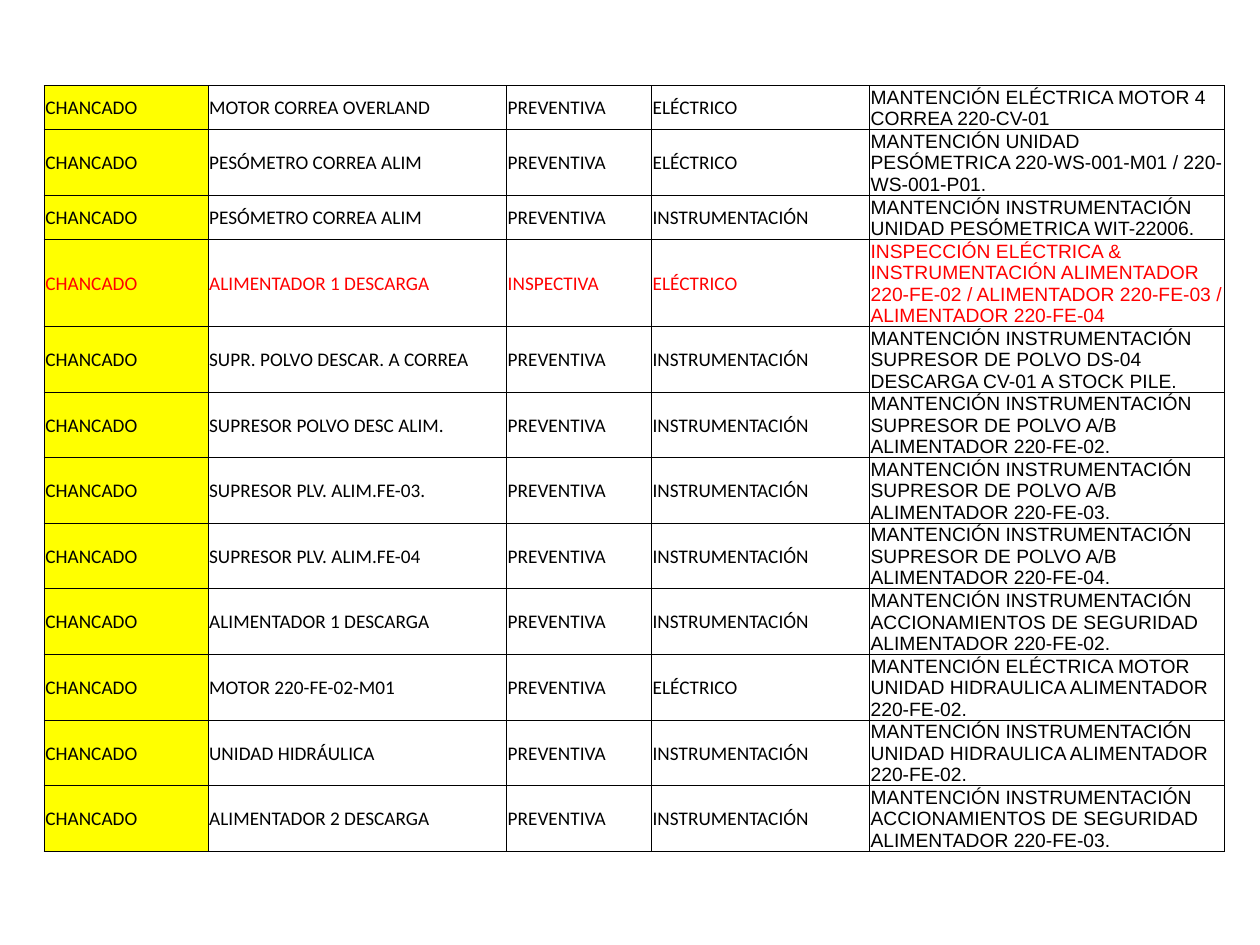
from dataclasses import dataclass

from lxml.etree import SubElement
from pptx import Presentation
from pptx.dml.color import RGBColor as RGB
from pptx.enum.text import MSO_ANCHOR as Anchor
from pptx.oxml.ns import qn
from pptx.util import Pt


@dataclass(frozen=True)
class Theme:
    ink: str = "000000"
    alert: str = "FF0000"
    area_fill: str = "FFFF00"
    label_font: str = "Calibri"
    detail_font: str = "Arial"
    size: float = 11
    border: float = 0.5
    inset: float = 0.72


class SlideBuilder:
    def __init__(self, prs, theme):
        self.theme = theme
        self.s = prs.slides.add_slide(prs.slide_layouts[6])

    def table(self, left, top, height, widths, heights, rows):
        frame = self.s.shapes.add_table(
            len(rows), len(widths), Pt(left), Pt(top), Pt(sum(widths)), Pt(height)
        )
        table = frame.table
        for flag in ("first_row", "horz_banding"):
            setattr(table, flag, False)
        for column, width in zip(table.columns, widths):
            column.width = Pt(width)
        for row, row_height in zip(table.rows, heights):
            row.height = Pt(row_height)
        frame.height = Pt(height)
        for r, values in enumerate(rows):
            color = self.theme.alert if "INSPECTIVA" in values else self.theme.ink
            for c, text in enumerate(values):
                self.cell(
                    table.cell(r, c), text, color,
                    font=self.theme.detail_font if c == len(widths) - 1 else self.theme.label_font,
                    fill=self.theme.area_fill if c == 0 else None,
                )

    def cell(self, cell, text, color, font, fill):
        inset = Pt(self.theme.inset)
        layout = {
            "margin_left": inset, "margin_right": inset, "margin_top": inset,
            "margin_bottom": 0, "vertical_anchor": Anchor.MIDDLE,
        }
        for name, value in layout.items():
            setattr(cell, name, value)
        run = cell.text_frame.paragraphs[0].add_run()
        run.text = text
        for name, value in {"name": font, "size": Pt(self.theme.size)}.items():
            setattr(run.font, name, value)
        run.font.color.rgb = RGB.from_string(color)
        self.borders(cell)
        if fill:
            cell.fill.solid()
            cell.fill.fore_color.rgb = RGB.from_string(fill)
        else:
            cell.fill.background()

    def borders(self, cell):
        props = cell._tc.get_or_add_tcPr()
        for side in ("lnL", "lnR", "lnT", "lnB"):
            line = SubElement(props, qn(f"a:{side}"), w=str(Pt(self.theme.border)))
            solid = SubElement(line, qn("a:solidFill"))
            SubElement(solid, qn("a:srgbClr"), val=self.theme.ink)


AREA = "CHANCADO"
PREV = "PREVENTIVA"
ELEC = "ELÉCTRICO"
INST = "INSTRUMENTACIÓN"

TASKS = [
    ("MOTOR CORREA OVERLAND", PREV, ELEC,
     "MANTENCIÓN ELÉCTRICA MOTOR 4 CORREA 220-CV-01"),
    ("PESÓMETRO CORREA ALIM", PREV, ELEC,
     "MANTENCIÓN UNIDAD PESÓMETRICA 220-WS-001-M01 / 220-WS-001-P01."),
    ("PESÓMETRO CORREA ALIM", PREV, INST,
     "MANTENCIÓN INSTRUMENTACIÓN UNIDAD PESÓMETRICA WIT-22006."),
    ("ALIMENTADOR 1 DESCARGA", "INSPECTIVA", ELEC,
     "INSPECCIÓN ELÉCTRICA & INSTRUMENTACIÓN ALIMENTADOR 220-FE-02 / "
     "ALIMENTADOR 220-FE-03 / ALIMENTADOR 220-FE-04"),
    ("SUPR. POLVO DESCAR. A CORREA", PREV, INST,
     "MANTENCIÓN INSTRUMENTACIÓN SUPRESOR DE POLVO DS-04 DESCARGA CV-01 A STOCK PILE."),
    ("SUPRESOR POLVO DESC ALIM.", PREV, INST,
     "MANTENCIÓN INSTRUMENTACIÓN SUPRESOR DE POLVO A/B ALIMENTADOR 220-FE-02."),
    ("SUPRESOR PLV. ALIM.FE-03.", PREV, INST,
     "MANTENCIÓN INSTRUMENTACIÓN SUPRESOR DE POLVO A/B ALIMENTADOR 220-FE-03."),
    ("SUPRESOR PLV. ALIM.FE-04", PREV, INST,
     "MANTENCIÓN INSTRUMENTACIÓN SUPRESOR DE POLVO A/B ALIMENTADOR 220-FE-04."),
    ("ALIMENTADOR 1 DESCARGA", PREV, INST,
     "MANTENCIÓN INSTRUMENTACIÓN ACCIONAMIENTOS DE SEGURIDAD ALIMENTADOR 220-FE-02."),
    ("MOTOR 220-FE-02-M01", PREV, ELEC,
     "MANTENCIÓN ELÉCTRICA MOTOR UNIDAD HIDRAULICA ALIMENTADOR 220-FE-02."),
    ("UNIDAD HIDRÁULICA", PREV, INST,
     "MANTENCIÓN INSTRUMENTACIÓN UNIDAD HIDRAULICA ALIMENTADOR 220-FE-02."),
    ("ALIMENTADOR 2 DESCARGA", PREV, INST,
     "MANTENCIÓN INSTRUMENTACIÓN ACCIONAMIENTOS DE SEGURIDAD ALIMENTADOR 220-FE-03."),
]


def main():
    prs = Presentation()
    prs.slide_width, prs.slide_height = Pt(720), Pt(540)
    SlideBuilder(prs, Theme()).table(
        left=25.2, top=48.96, height=466.56,
        widths=[93.6, 170.64, 82.8, 124.56, 203.04],
        heights=[8.64] * 3 + [17.28] + [12.96] * 8,
        rows=[(AREA, *task) for task in TASKS],
    )
    prs.save("out.pptx")


if __name__ == "__main__":
    main()
